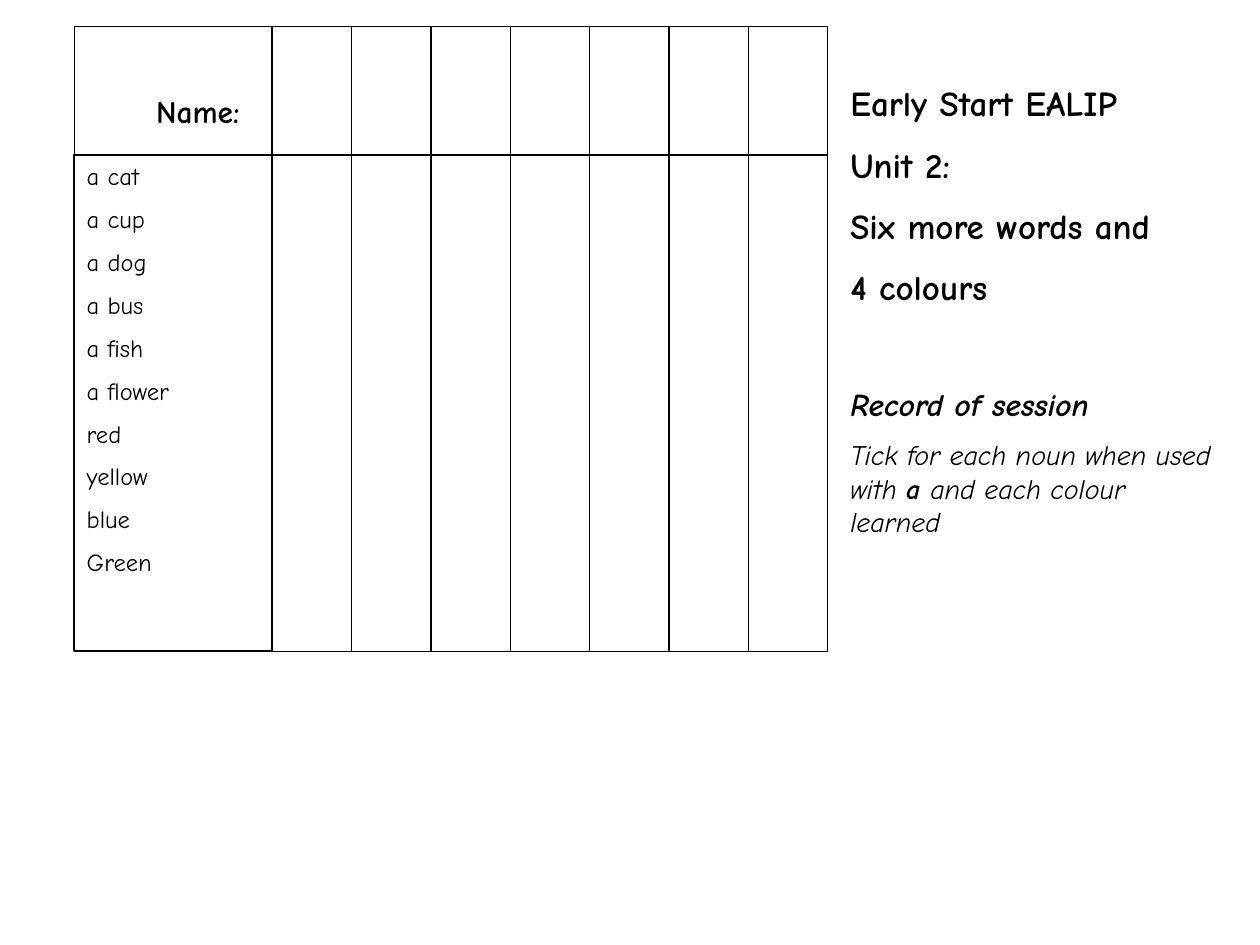
from dataclasses import dataclass

import pptx
import pptx.dml.color
import pptx.enum.shapes
import pptx.enum.text
import pptx.util
from pptx.util import Inches


@dataclass(frozen=True)
class Theme:
    font: str = "Comic Neue"
    ink: pptx.dml.color.RGBColor = pptx.dml.color.RGBColor(0, 0, 0)
    paper: pptx.dml.color.RGBColor = pptx.dml.color.RGBColor(255, 255, 255)
    title: int = 20
    heading: int = 18
    note: int = 16
    word: int = 14
    thin: float = 0.75
    thick: float = 1
    gap: float = 0.55


THEME = Theme()
WORDS = ["a cat", "a cup", "a dog", "a bus", "a fish", "a flower",
         "red", "yellow", "blue", "Green"]
TITLE_LINES = ["Early Start EALIP", "Unit 2:", "Six more words and", "4 colours"]
PUPIL_COUNT = 7
NAME_WIDTH = Inches(1.57)
PUPIL_WIDTH = Inches(0.63)


def add_cell(slide, left, top, width, height, line_width=THEME.thin):
    cell = slide.shapes.add_shape(
        pptx.enum.shapes.MSO_SHAPE.RECTANGLE, left, top, width, height)
    cell.shadow.inherit = False
    cell.fill.solid()
    cell.fill.fore_color.rgb = THEME.paper
    cell.line.color.rgb = THEME.ink
    cell.line.width = pptx.util.Pt(line_width)
    return cell


def add_label(slide, left, top, width, height):
    label = slide.shapes.add_textbox(left, top, width, height)
    label.text_frame.word_wrap = True
    return label.text_frame


def write_paragraphs(frame, paragraphs):
    frame.vertical_anchor = pptx.enum.text.MSO_ANCHOR.TOP
    for index, (size, space, runs) in enumerate(paragraphs):
        paragraph = frame.add_paragraph() if index else frame.paragraphs[0]
        paragraph.alignment = pptx.enum.text.PP_ALIGN.LEFT
        paragraph.space_before = pptx.util.Pt(space if index else 0)
        for text, bold, italic in runs:
            run = paragraph.add_run()
            run.text = text
            run.font.name = THEME.font
            run.font.size = pptx.util.Pt(size)
            run.font.bold = bold
            run.font.italic = italic
            run.font.color.rgb = THEME.ink


def add_pupil_cells(slide, left, top, height):
    for column in range(PUPIL_COUNT):
        add_cell(slide, left + column * PUPIL_WIDTH, top, PUPIL_WIDTH, height)


def add_word_rows(slide, left, top, height):
    word_list = add_cell(slide, left, top, NAME_WIDTH + PUPIL_WIDTH, height, THEME.thick)
    write_paragraphs(word_list.text_frame, [
        (THEME.word, THEME.word * THEME.gap, [(word, False, False)]) for word in WORDS])
    add_pupil_cells(slide, left + NAME_WIDTH, top, height)


def add_name_row(slide, left, top, height):
    add_cell(slide, left, top, NAME_WIDTH, height)
    add_pupil_cells(slide, left + NAME_WIDTH, top, height)
    name = add_label(slide, left + Inches(0.55), top + Inches(0.47),
                     Inches(1.02), Inches(0.4))
    write_paragraphs(name, [(THEME.heading, 0, [("Name:", True, False)])])


def add_instructions(slide, left, top, width, height):
    paragraphs = [(THEME.title, THEME.title * THEME.gap, [(line, True, False)])
                  for line in TITLE_LINES]
    paragraphs += [
        (THEME.heading, 44, [("Record of session", True, True)]),
        (THEME.note, THEME.note * THEME.gap, [
            ("Tick for each noun when used with ", False, True),
            ("a ", True, True),
            ("and each colour learned", False, True)]),
    ]
    write_paragraphs(add_label(slide, left, top, width, height), paragraphs)


def main():
    deck = pptx.Presentation()
    deck.slide_width = Inches(10)
    deck.slide_height = Inches(7.5)
    slide = deck.slides.add_slide(deck.slide_layouts[6])
    add_word_rows(slide, Inches(0.59), Inches(1.23), Inches(3.94))
    add_instructions(slide, Inches(6.65), Inches(0.6), Inches(3.07), Inches(3.85))
    add_name_row(slide, Inches(0.59), Inches(0.21), Inches(1.02))
    deck.save("out.pptx")


if __name__ == "__main__":
    main()
